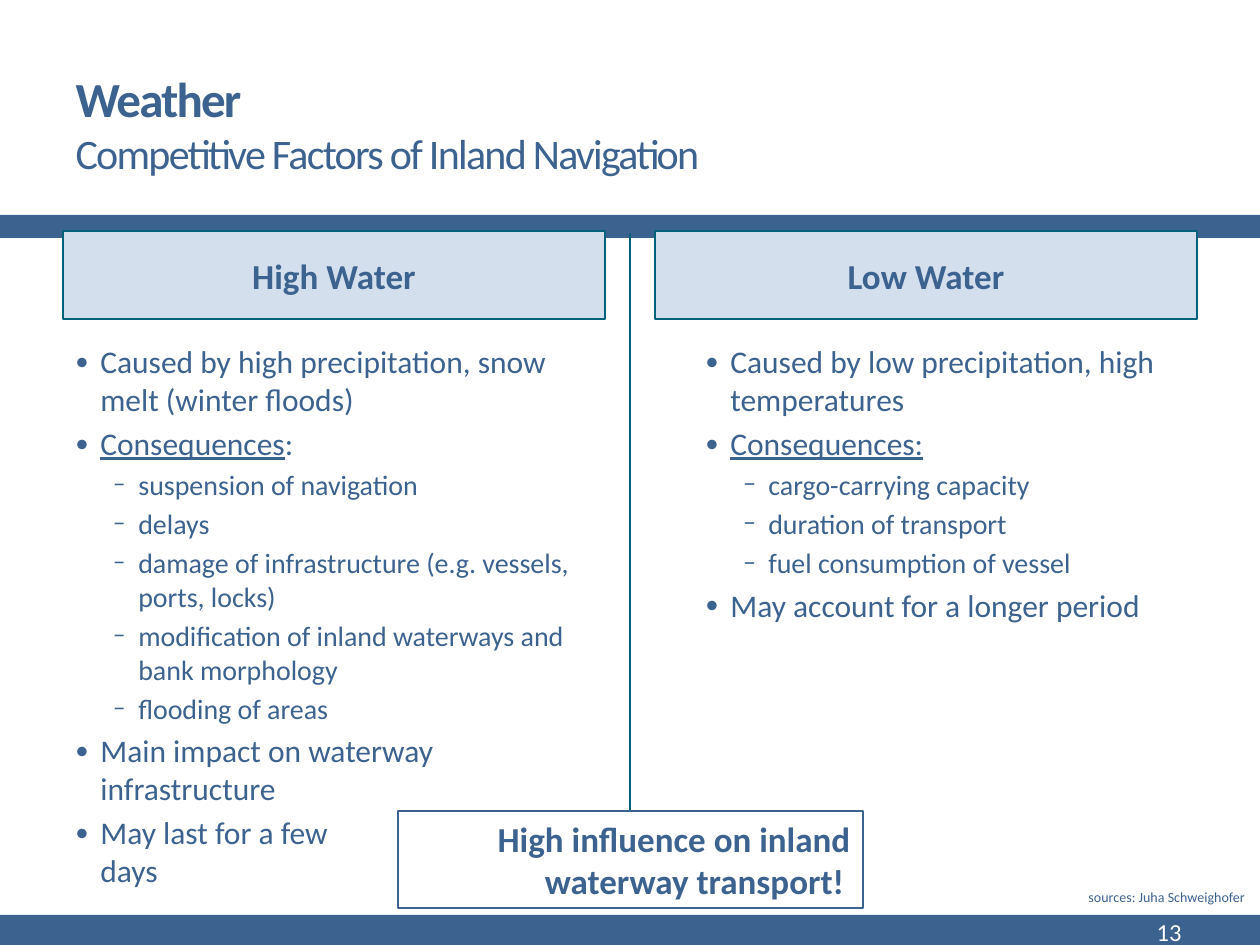
from lxml import etree
from pptx import Presentation, util as u
from pptx.dml.color import RGBColor
from pptx.enum import shapes, text
from pptx.oxml.ns import qn

BLUE = RGBColor(0x3C, 0x62, 0x8F)
PALE = RGBColor(0xD4, 0xDF, 0xED)
TEAL = RGBColor(0x04, 0x61, 0x7B)
WHITE = RGBColor(0xFF, 0xFF, 0xFF)
FONT = "Calibri"
ALIGN = text.PP_ALIGN
MIDDLE = text.MSO_ANCHOR.MIDDLE

TITLE = [("Weather", 28, True), ("Competitive Factors of Inland Navigation", 24, False)]
BANDS = [(0, 215, 1260, 23), (0, 915, 1260, 30)]
COLUMNS = [
    {
        "heading": "High Water", "left": 63, "indent": 25, "sub_indent": 63, "sub_size": 85,
        "items": [
            (0, "Caused by high precipitation, snow melt (winter floods)", ""),
            (0, "Consequences", ":"),
            (1, "suspension of navigation", ""),
            (1, "delays", ""),
            (1, "damage of infrastructure (e.g. vessels, ports, locks)", ""),
            (1, "modification of inland waterways and bank morphology", ""),
            (1, "flooding of areas", ""),
            (0, "Main impact on waterway infrastructure", ""),
            (0, "May last for a few\vdays", ""),
        ],
    },
    {
        "heading": "Low Water", "left": 655, "indent": 63, "sub_indent": 101, "sub_size": 90,
        "items": [
            (0, "Caused by low precipitation, high temperatures", ""),
            (0, "Consequences:", ""),
            (1, "cargo-carrying capacity", ""),
            (1, "duration of transport", ""),
            (1, "fuel consumption of vessel", ""),
            (0, "May account for a longer period", ""),
        ],
    },
]
COLUMN_WIDTH = 542
HANGING = 25
SIZES = [18, 16]
BULLETS = ["•", "−"]


def px(value):
    return u.Emu(round(value * 914400 / 126))


def set_format(target, **values):
    for name, value in values.items():
        setattr(target, name, value)


def set_font(font, size, color=BLUE, **values):
    set_format(font, name=FONT, size=u.Pt(size), **values)
    font.color.rgb = color


def add_box(slide, box, fill, line=None, line_width=0):
    shape = slide.shapes.add_shape(shapes.MSO_SHAPE.RECTANGLE, *map(px, box))
    shape.shadow.inherit = False
    shape.fill.solid()
    shape.fill.fore_color.rgb = fill
    if line is None:
        shape.line.fill.background()
    else:
        shape.line.color.rgb = line
        shape.line.width = u.Pt(line_width)
    return shape


def add_text(slide, box, **frame_values):
    frame = slide.shapes.add_textbox(*map(px, box)).text_frame
    set_format(frame, **{"word_wrap": True, **frame_values})
    return frame


def write(frame, words, size, color=BLUE, align=ALIGN.LEFT, **font_values):
    paragraph = frame.paragraphs[0]
    paragraph.alignment = align
    run = paragraph.add_run()
    run.text = words
    set_font(run.font, size, color, **font_values)
    return paragraph


def add_bullet(paragraph, character, size_percent, left):
    properties = paragraph._p.get_or_add_pPr()
    properties.set("marL", str(px(left)))
    properties.set("indent", str(-px(HANGING)))
    color = etree.SubElement(properties, qn("a:buClr"))
    etree.SubElement(color, qn("a:srgbClr"), val=str(BLUE))
    etree.SubElement(properties, qn("a:buSzPct"), val=str(size_percent * 1000))
    etree.SubElement(properties, qn("a:buFont"), typeface=FONT)
    etree.SubElement(properties, qn("a:buChar"), char=character)


def add_title(slide):
    title = slide.shapes.title
    set_format(title, left=px(63), top=px(55), width=px(726), height=px(136))
    frame = title.text_frame
    set_format(frame, vertical_anchor=MIDDLE, word_wrap=True, auto_size=text.MSO_AUTO_SIZE.NONE)
    paragraph = frame.paragraphs[0]
    paragraph.alignment = ALIGN.LEFT
    for index, (words, size, bold) in enumerate(TITLE):
        if index:
            paragraph.add_line_break()
        run = paragraph.add_run()
        run.text = words
        set_font(run.font, size, bold=bold)
        run._r.get_or_add_rPr().set("spc", "-100")


def add_divider(slide):
    divider = slide.shapes.add_connector(
        shapes.MSO_CONNECTOR.STRAIGHT, px(630), px(233), px(630), px(882))
    divider.line.color.rgb = TEAL
    divider.line.width = u.Pt(1.5)
    etree.SubElement(divider._element.spPr, qn("a:effectLst"))


def add_column(slide, column):
    heading = add_box(slide, (column["left"], 231, COLUMN_WIDTH, 88), PALE, TEAL, 1.5)
    heading.text_frame.vertical_anchor = MIDDLE
    write(heading.text_frame, column["heading"], 20, align=ALIGN.CENTER, bold=True)

    frame = add_text(slide, (column["left"], 336, COLUMN_WIDTH, 573))
    indents = [column["indent"], column["sub_indent"]]
    bullet_sizes = [85, column["sub_size"]]
    for index, (level, words, suffix) in enumerate(column["items"]):
        paragraph = frame.add_paragraph() if index else frame.paragraphs[0]
        paragraph.level = level
        if index:
            paragraph.space_before = u.Pt(SIZES[level] * 0.2)
        add_bullet(paragraph, BULLETS[level], bullet_sizes[level], indents[level])
        set_font(paragraph.font, SIZES[level])
        for line_index, line in enumerate(words.split("\v")):
            if line_index:
                paragraph.add_line_break()
            run = paragraph.add_run()
            run.text = line
            set_font(run.font, SIZES[level], underline=line.startswith("Consequences"))
        if suffix:
            run = paragraph.add_run()
            run.text = suffix
            set_font(run.font, SIZES[level])


def add_conclusion(slide):
    callout = add_box(slide, (398, 811, 465, 97), WHITE, BLUE, 0.75)
    set_format(callout.text_frame, vertical_anchor=MIDDLE, word_wrap=True)
    paragraph = write(callout.text_frame, "High influence on inland waterway transport!", 20,
                      align=ALIGN.RIGHT, bold=True)
    paragraph._p.get_or_add_pPr().set("marL", str(px(63)))
    run = paragraph.add_run()
    run.text = " "
    set_font(run.font, 16, bold=False)


def main():
    presentation = Presentation()
    set_format(presentation, slide_width=px(1260), slide_height=px(945))
    slide = presentation.slides.add_slide(presentation.slide_layouts[5])
    for band in BANDS:
        add_box(slide, band, BLUE)
    add_divider(slide)
    add_title(slide)
    for column in COLUMNS:
        add_column(slide, column)
    number = add_text(slide, (1047, 909, 147, 45), vertical_anchor=MIDDLE)
    write(number, "13", 14, WHITE, ALIGN.RIGHT)
    add_conclusion(slide)
    sources = add_text(slide, (1076, 882, 184, 30), word_wrap=False)
    write(sources, "sources: Juha Schweighofer", 8)
    presentation.save("out.pptx")


if __name__ == "__main__":
    main()
